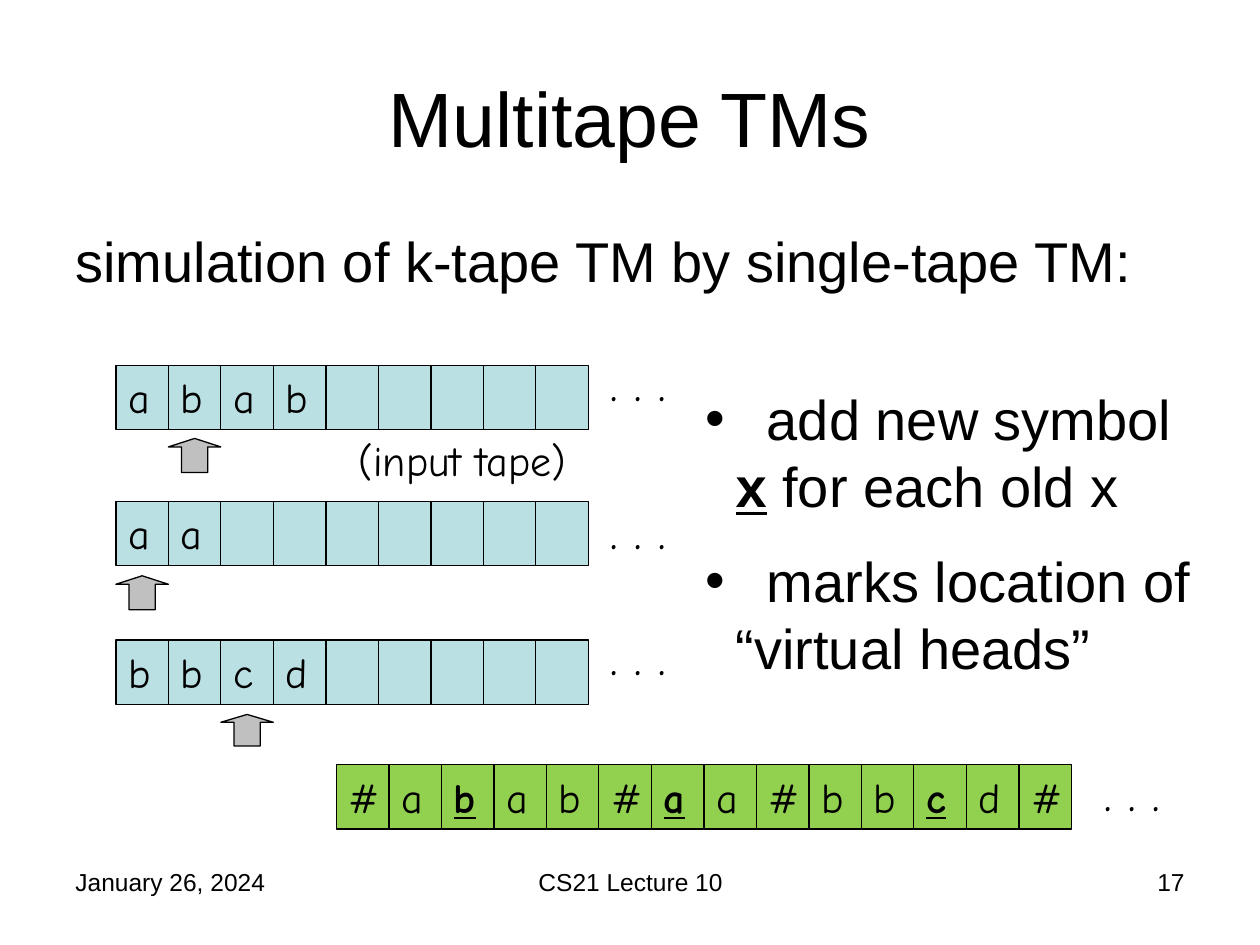
from pptx import Presentation
from pptx.dml.color import RGBColor
from pptx.enum import shapes, text
from pptx.oxml import parse_xml
from pptx.oxml.ns import nsdecls
from pptx.util import Inches, Pt

BLACK = RGBColor(0x00, 0x00, 0x00)
TAPE_BLUE = RGBColor(0xBB, 0xE0, 0xE3)
TAPE_GREEN = RGBColor(0x92, 0xD0, 0x50)
HEAD_GRAY = RGBColor(0xC0, 0xC0, 0xC0)

SANS = "Arial"
HAND = "Comic Neue"
CELL_WIDTH = 5 / 12
CELL_HEIGHT = 0.51
TAPE_LEFT = 0.92
TAPE_LENGTH = 9

TAPES = [
    {"symbols": "abab", "head": 1, "top": 2.9, "head_top": 3.48, "head_height": 0.27, "dots_top": 2.75},
    {"symbols": "aa", "head": 0, "top": 3.98, "head_top": 4.57, "head_height": 0.27, "dots_top": 3.92},
    {"symbols": "bbcd", "head": 2, "top": 5.08, "head_top": 5.67, "head_height": 0.25, "dots_top": 4.92},
]


def add_run(paragraph, words, size=32, font=SANS, marked=False):
    run = paragraph.add_run()
    run.text = words
    run.font.size = Pt(size)
    run.font.name = font
    run.font.color.rgb = BLACK
    if marked:
        run.font.bold = True
        run.font.underline = True
    return run


def add_text(slide, words, left, top, width, height, align=text.PP_ALIGN.LEFT,
             anchor=text.MSO_ANCHOR.TOP, **run_format):
    frame = slide.shapes.add_textbox(
        Inches(left), Inches(top), Inches(width), Inches(height)).text_frame
    frame.word_wrap = True
    frame.vertical_anchor = anchor
    frame.paragraphs[0].alignment = align
    if words:
        add_run(frame.paragraphs[0], words, **run_format)
    return frame


def add_outlined(slide, preset, left, top, width, height, fill):
    shape = slide.shapes.add_shape(
        preset, Inches(left), Inches(top), Inches(width), Inches(height))
    shape.shadow.inherit = False
    shape.fill.solid()
    shape.fill.fore_color.rgb = fill
    shape.line.color.rgb = BLACK
    shape.line.width = Pt(0.75)
    return shape


def add_tape(slide, cells, left, top, fill):
    for column, (symbol, marked) in enumerate(cells):
        cell = add_outlined(slide, shapes.MSO_SHAPE.RECTANGLE, left + column * CELL_WIDTH,
                            top, CELL_WIDTH, CELL_HEIGHT, fill)
        if symbol:
            frame = cell.text_frame
            frame.vertical_anchor = text.MSO_ANCHOR.TOP
            frame.paragraphs[0].alignment = text.PP_ALIGN.LEFT
            add_run(frame.paragraphs[0], symbol, size=24, font=HAND, marked=marked)


def add_head(slide, column, top, height):
    head = add_outlined(slide, shapes.MSO_SHAPE.UP_ARROW, TAPE_LEFT + column * CELL_WIDTH,
                        top, CELL_WIDTH, height, HEAD_GRAY)
    head.adjustments[0] = 0.5
    head.adjustments[1] = 0.25


def add_dots(slide, left, top, width):
    add_text(slide, ". . .", left, top, width, 0.57, size=28, font=HAND)


def add_bullet(paragraph, pieces):
    properties = paragraph._p.get_or_add_pPr()
    properties.set("marL", str(Inches(0.24)))
    properties.set("indent", str(-Inches(0.24)))
    properties.append(parse_xml(f'<a:buFont {nsdecls("a")} typeface="{SANS}"/>'))
    properties.append(parse_xml(f'<a:buChar {nsdecls("a")} char="•"/>'))
    lead = add_run(paragraph, " ")
    lead.font._element.set("spc", "890")
    for words, marked in pieces:
        add_run(paragraph, words, marked=marked)


def add_notes_on_symbols(slide):
    frame = add_text(slide, "", 5.5, 3, 4.08, 2.5)
    add_bullet(frame.paragraphs[0],
               [("add new symbol ", False), ("x", True), (" for each old x", False)])
    second = frame.add_paragraph()
    second.space_before = Pt(16)
    add_bullet(second, [("marks location of “virtual heads”", False)])


def main():
    deck = Presentation()
    deck.slide_width, deck.slide_height = Inches(10), Inches(7.5)
    slide = deck.slides.add_slide(deck.slide_layouts[6])

    add_text(slide, "Multitape TMs", 0.5, 0.3, 9, 1.25, size=44,
             align=text.PP_ALIGN.CENTER, anchor=text.MSO_ANCHOR.MIDDLE)
    add_text(slide, "simulation of k-tape TM by single-tape TM:", 0.5, 1.75, 9, 0.75)

    combined = [("#", False)]
    for tape in TAPES:
        symbols = tape["symbols"]
        add_tape(slide, [(symbol, False) for symbol in symbols]
                 + [("", False)] * (TAPE_LENGTH - len(symbols)),
                 TAPE_LEFT, tape["top"], TAPE_BLUE)
        add_head(slide, tape["head"], tape["head_top"], tape["head_height"])
        add_dots(slide, 4.75, tape["dots_top"], 1.58)
        combined += [(symbol, column == tape["head"]) for column, symbol in enumerate(symbols)]
        combined.append(("#", False))

    add_text(slide, "(input tape)", 2.75, 3.4, 2.58, 0.5, size=24, font=HAND)
    add_tape(slide, combined, 2.67, 6.07, TAPE_GREEN)
    add_dots(slide, 8.67, 6, 0.92)
    add_notes_on_symbols(slide)

    add_text(slide, "January 26, 2024", 0.5, 6.83, 2.33, 0.52, size=14)
    add_text(slide, "CS21 Lecture 10", 3.42, 6.83, 3.17, 0.52, size=14,
             align=text.PP_ALIGN.CENTER)
    add_text(slide, "17", 7.17, 6.83, 2.33, 0.52, size=14, align=text.PP_ALIGN.RIGHT)
    deck.save("out.pptx")


if __name__ == "__main__":
    main()
